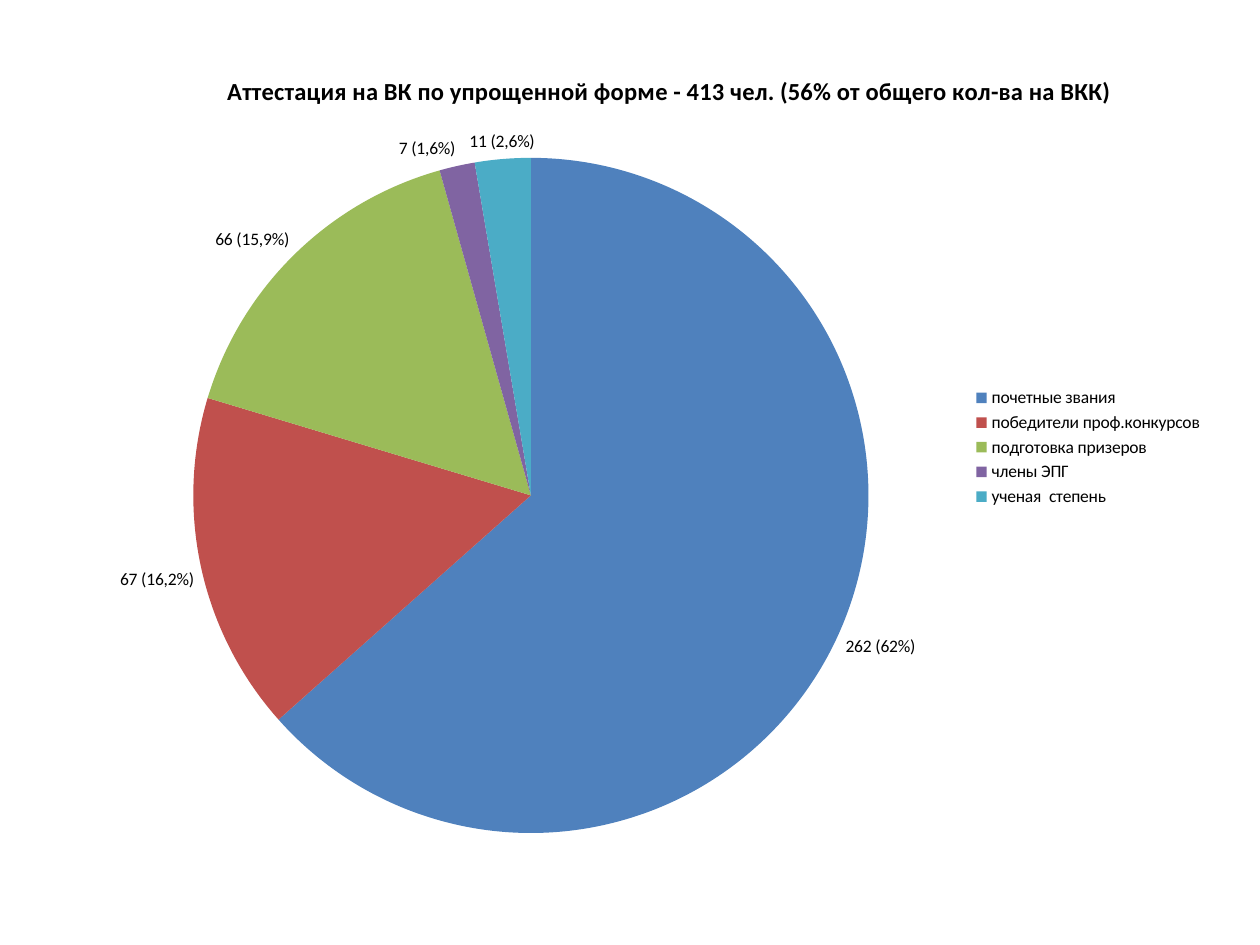
from lxml import etree
from pptx import Presentation
from pptx import util as u
from pptx.chart.data import CategoryChartData
from pptx.dml.color import RGBColor
from pptx.enum import chart as c
from pptx.oxml.ns import qn

BLACK = RGBColor(0x00, 0x00, 0x00)
BLUE = RGBColor(0x4F, 0x81, 0xBD)
RED = RGBColor(0xC0, 0x50, 0x4D)
GREEN = RGBColor(0x9B, 0xBB, 0x59)
PURPLE = RGBColor(0x80, 0x64, 0xA2)
TEAL = RGBColor(0x4B, 0xAC, 0xC6)
FONT = "Calibri"

TITLE = "Аттестация на ВК по упрощенной форме - 413 чел. (56% от общего кол-ва на ВКК) "
GROUNDS = [
    ("почетные звания", 262, "262 (62%)", BLUE),
    ("победители проф.конкурсов", 67, "67 (16,2%)", RED),
    ("подготовка призеров", 66, "66 (15,9%)", GREEN),
    ("члены ЭПГ", 7, "7 (1,6%)", PURPLE),
    ("ученая  степень", 11, "11 (2,6%)", TEAL),
]


def format_font(font, size=10, bold=False, color=BLACK):
    """Set the typeface, size, weight and colour of a font."""
    font.name = FONT
    font.size = u.Pt(size)
    font.bold = bold
    font.color.rgb = color


def write_text(frame, content, **style):
    """Put one formatted run into a text frame."""
    run = frame.paragraphs[0].add_run()
    run.text = content
    format_font(run.font, **style)


def place_part(parent, index, **fractions):
    """Give a chart part a manual layout in fractions of the chart."""
    for old_layout in parent.findall(qn("c:layout")):
        parent.remove(old_layout)
    layout = etree.Element(qn("c:layout"))
    manual = etree.SubElement(layout, qn("c:manualLayout"))
    if "w" in fractions:
        etree.SubElement(manual, qn("c:layoutTarget"), val="inner")
    for side in ("x", "y"):
        etree.SubElement(manual, qn(f"c:{side}Mode"), val="edge")
    for name, value in fractions.items():
        etree.SubElement(manual, qn(f"c:{name}"), val=str(value))
    parent.insert(index, layout)


def add_pie(slide, left, top, width, height):
    """Draw the titled pie with its labels and legend in the given box."""
    data = CategoryChartData()
    data.categories = [name for name, *_ in GROUNDS]
    data.add_series("Series 1", [value for _, value, *_ in GROUNDS])
    chart = slide.shapes.add_chart(
        c.XL_CHART_TYPE.PIE, left, top, width, height, data
    ).chart
    format_font(chart.font)

    chart.has_title = True
    write_text(chart.chart_title.text_frame, TITLE, size=14, bold=True)
    place_part(chart.element.find(".//" + qn("c:title")), 1, x=0.13, y=0.03)
    place_part(
        chart.element.find(".//" + qn("c:plotArea")), 0, x=0.1, y=0.14, w=0.6, h=0.84
    )

    chart.has_legend = True
    chart.legend.position = c.XL_LEGEND_POSITION.RIGHT
    chart.legend.include_in_layout = False
    format_font(chart.legend.font)

    plot = chart.plots[0]
    plot.vary_by_categories = True
    series = plot.series[0]
    series.data_labels.show_value = True
    series.data_labels.position = c.XL_LABEL_POSITION.OUTSIDE_END
    format_font(series.data_labels.font)
    for index, (_, _, label, color) in enumerate(GROUNDS):
        point = series.points[index]
        point.format.fill.solid()
        point.format.fill.fore_color.rgb = color
        write_text(point.data_label.text_frame, label)
        point.data_label.position = c.XL_LABEL_POSITION.OUTSIDE_END


def main():
    """Build the slide and save it."""
    presentation = Presentation()
    presentation.slide_width = u.Inches(10)
    presentation.slide_height = u.Inches(7.5)
    slide = presentation.slides.add_slide(presentation.slide_layouts[6])
    add_pie(slide, u.Inches(0.59), u.Inches(0.36), u.Inches(9.06), u.Inches(6.38))
    presentation.save("out.pptx")


if __name__ == "__main__":
    main()
